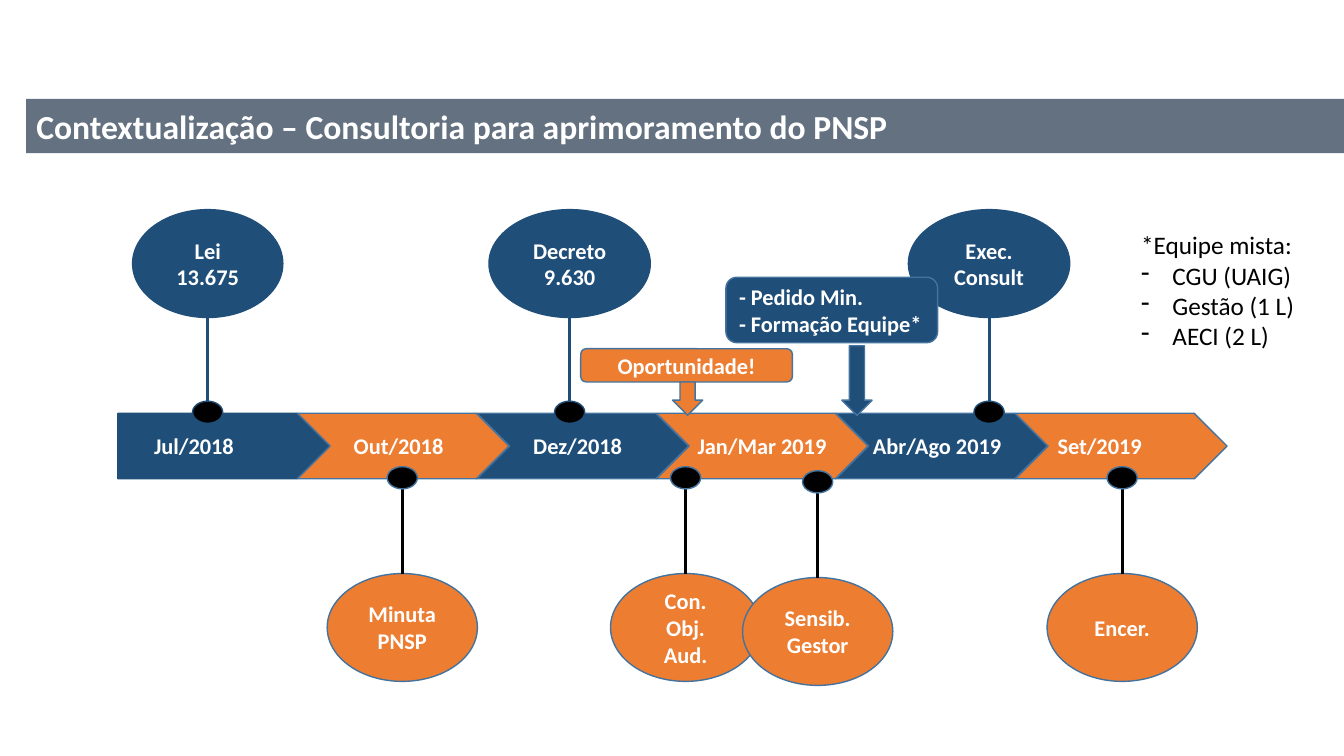
"""Build the PNSP consultancy timeline slide on a grid of tenth-of-an-inch cells."""
from lxml import etree
from pptx import Presentation
from pptx import util as u
from pptx.dml.color import RGBColor
from pptx.enum import shapes, text
from pptx.oxml.ns import qn

THEME = {
    "bar": "637181", "navy": "1F4E79", "orange": "ED7D31", "edge": "43739E",
    "black": "000000", "white": "FFFFFF", "font": "Calibri",
    "title": 24, "label": 16, "note": 18,
}
CELL = u.Inches(0.1)
BAND_LEFT, BAND_TOP, BAND_STEP, BAND_WIDTH, BAND_HEIGHT = 11.7, 41, 17.8, 21, 6.5
BALLOON_HEIGHT, DOT_WIDTH, DOT_HEIGHT = 10.7, 3, 2.2
KIND = shapes.MSO_SHAPE
LEFT, CENTER = text.PP_ALIGN.LEFT, text.PP_ALIGN.CENTER
TOP, MIDDLE = text.MSO_ANCHOR.TOP, text.MSO_ANCHOR.MIDDLE

deck = Presentation()
deck.slide_width, deck.slide_height = u.Inches(13.33), u.Inches(7.5)
page = deck.slides.add_slide(deck.slide_layouts[5])


def draw(kind, cells, fill, edge):
    """Add a filled preset shape placed in grid cells."""
    shape = page.shapes.add_shape(kind, *[round(cell * CELL) for cell in cells])
    shape.shadow.inherit = False
    shape.fill.solid()
    shape.fill.fore_color.rgb = RGBColor.from_string(THEME[fill])
    shape.line.color.rgb = RGBColor.from_string(THEME[edge])
    shape.line.width = u.Pt(1)
    return shape


def write(box, lines, align=CENTER, anchor=MIDDLE, size="label", color="white", bold=True):
    """Fill a box with one paragraph per line; lines starting with a tab are dashed."""
    frame = box.text_frame
    layout = {"word_wrap": True, "auto_size": text.MSO_AUTO_SIZE.NONE, "vertical_anchor": anchor}
    for name, value in layout.items():
        setattr(frame, name, value)
    for index, line in enumerate(lines):
        para = frame.add_paragraph() if index else frame.paragraphs[0]
        para.alignment = align
        if line.startswith("\t"):
            properties = para._p.get_or_add_pPr()
            properties.set("marL", str(u.Inches(0.31)))
            properties.set("indent", str(-u.Inches(0.31)))
            etree.SubElement(properties, qn("a:buChar")).set("char", "-")
        span = para.add_run()
        span.text = line.strip()
        style = {"name": THEME["font"], "size": u.Pt(THEME[size]), "bold": bold}
        for name, value in style.items():
            setattr(span.font, name, value)
        span.font.color.rgb = RGBColor.from_string(THEME[color])


title = page.shapes.title
title_place = {"left": 2.6, "top": 9.8, "width": 130.7, "height": 5.4}
for name, cells in title_place.items():
    setattr(title, name, round(cells * CELL))
title.fill.solid()
title.fill.fore_color.rgb = RGBColor.from_string(THEME["bar"])
write(title, ["Contextualização – Consultoria para aprimoramento do PNSP"], LEFT, size="title")

periods = [
    ("Jul/2018", 14.3), ("Out/2018", 34.1), ("Dez/2018", 51.9),
    ("Jan/Mar 2019", 68.2), ("Abr/Ago 2019", 85.6), ("Set/2019", 103.9),
]
for index in range(len(periods)):
    draw(
        KIND.CHEVRON if index else KIND.PENTAGON,
        (BAND_LEFT + index * BAND_STEP, BAND_TOP, BAND_WIDTH, BAND_HEIGHT),
        "orange" if index % 2 else "navy",
        "edge" if index else "navy",
    )
for label, left in periods:
    box = page.shapes.add_textbox(*[round(cell * CELL) for cell in (left, 42.4, 17.8, 4.1)])
    write(box, [label], LEFT, TOP)

above = {"balloon": 20.8, "stem": (31.5, 39.9), "dot": 39.8,
         "fill": "navy", "edge": "navy", "ink": "navy"}
below = {"balloon": 56.9, "stem": (56.9, 48.5), "dot": 46.3,
         "fill": "orange", "edge": "edge", "ink": "black"}
milestones = [
    (above, 20.6, 14.9, 0, ["Lei 13.675"]),
    (below, 39.9, 14.9, 0, ["Minuta", "PNSP"]),
    (above, 56.5, 16, 0, ["Decreto", "9.630"]),
    (below, 68, 14.9, 0, ["Con.", "Obj.", "Aud."]),
    (below, 81.1, 14.9, 0.4, ["Sensib.", "Gestor"]),
    (above, 98.1, 16, 0, ["Exec. Consult"]),
    (below, 111.3, 14.9, 0, ["Encer."]),
]
for side, center, width, drop, lines in milestones:
    balloon = draw(
        KIND.OVAL,
        (center - width / 2, side["balloon"] + drop, width, BALLOON_HEIGHT),
        side["fill"], side["edge"],
    )
    write(balloon, lines)
    start, end = [row + drop for row in side["stem"]]
    stem = page.shapes.add_connector(
        shapes.MSO_CONNECTOR.STRAIGHT,
        *[round(cell * CELL) for cell in (center, start, center, end)],
    )
    stem.line.color.rgb = RGBColor.from_string(THEME[side["ink"]])
    stem.line.width = u.Pt(2.25)
    etree.SubElement(stem._element.spPr, qn("a:effectLst"))
    draw(
        KIND.OVAL,
        (center - DOT_WIDTH / 2, side["dot"] + drop, DOT_WIDTH, DOT_HEIGHT),
        "black", side["edge"],
    )

callouts = [
    ("orange", (57.6, 34.6, 21, 3.3), (66.7, 37.9, 3, 3.3), CENTER, ["Oportunidade!"]),
    ("navy", (72, 27.5, 21, 6.5), (83.5, 34.3, 3, 6.9), LEFT,
     ["- Pedido Min.", "- Formação Equipe*"]),
]
for fill, place, arrow_place, align, lines in callouts:
    write(draw(KIND.ROUNDED_RECTANGLE, place, fill, "edge"), lines, align)
    draw(KIND.DOWN_ARROW, arrow_place, fill, "edge")

team = page.shapes.add_textbox(*[round(cell * CELL) for cell in (112.2, 22.3, 17.8, 13.1)])
write(team, ["*Equipe mista:", "\tCGU (UAIG)", "\tGestão (1 L)", "\tAECI (2 L)"],
      LEFT, TOP, "note", "black", False)

deck.save("out.pptx")
